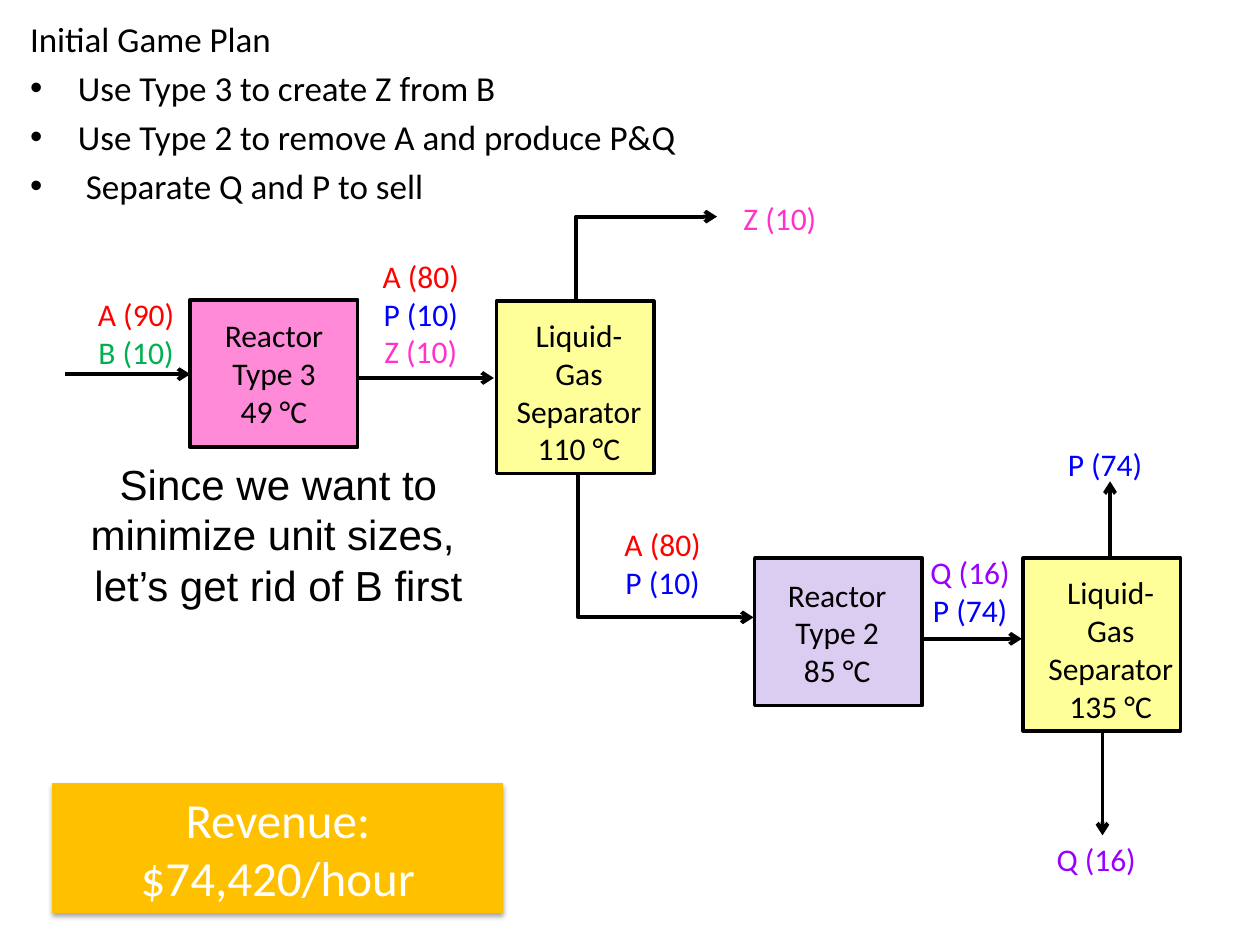
from dataclasses import dataclass

from lxml.etree import SubElement
from pptx import Presentation
from pptx.dml.color import RGBColor
from pptx.enum.shapes import MSO_CONNECTOR as Conn, MSO_SHAPE as Shp
from pptx.enum.text import MSO_ANCHOR as Anchor, MSO_AUTO_SIZE as Fit, PP_ALIGN as Al
from pptx.oxml.ns import qn
from pptx.util import Inches, Pt

W, H = Inches(10), Inches(7.5)
BLACK = "000000"
SPECIES = {"A": "FF0000", "B": "00B050", "P": "0000FF", "Q": "9900FF", "Z": "FF33CC"}
FIRST_LINE, NEXT_LINE = 5.33, 4.05


@dataclass
class Box:
    x: float
    y: float
    w: float
    h: float

    def emu(self) -> tuple[int, int, int, int]:
        return px(self.x), py(self.y), px(self.w), py(self.h)


@dataclass
class Unit:
    box: Box
    label: Box
    lines: list[str]
    fill: str


@dataclass
class Stream:
    x: float
    y: float
    w: float
    lines: list[str]


@dataclass
class Arrow:
    x1: float
    y1: float
    x2: float
    y2: float


UNITS = [
    Unit(Box(15.1, 31.73, 13.3, 15.6), Box(15.1, 32.8, 13.3, 13.47),
         ["Reactor", "Type 3", "49 °C"], "FF8AD8"),
    Unit(Box(39.4, 31.87, 12.5, 18.27), Box(39.7, 32.8, 12.5, 17.47),
         ["Liquid-Gas Separator", "110 °C"], "FFFF99"),
    Unit(Box(59.9, 59.07, 13.3, 15.6), Box(59.8, 60.27, 13.3, 13.47),
         ["Reactor", "Type 2", "85 °C"], "DBCCF2"),
    Unit(Box(81.2, 59.07, 12.5, 18.27), Box(81.9, 60, 12.5, 17.47),
         ["Liquid-Gas Separator", "135 °C"], "FFFF99"),
]
STREAMS = [
    Stream(5.9, 30.53, 9.8, ["A (90)", "B (10)"]),
    Stream(23.4, 26.53, 20, ["A (80)", "P (10)", "Z (10)"]),
    Stream(51.9, 20.4, 20, ["Z (10)"]),
    Stream(42.6, 54.93, 20, ["A (80)", "P (10)"]),
    Stream(67, 57.87, 20, ["Q (16)", "P (74)"]),
    Stream(77.7, 46.4, 20, ["P (74)"]),
    Stream(79.6, 88.27, 14.8, ["Q (16)"]),
]
STRAIGHT = [
    Arrow(5.2, 39.6, 15.1, 39.6),
    Arrow(28.4, 40, 39.2, 40),
    Arrow(73.2, 67.6, 81.1, 67.6),
    Arrow(88.1, 59.07, 88.1, 50.93),
    Arrow(87.5, 77.47, 87.5, 88.4),
]
BENT = [Arrow(45.7, 31.87, 56.9, 22.93), Arrow(45.9, 50.27, 59.8, 65.33)]
PLAN = ["Initial Game Plan", "Use Type 3 to create Z from B",
        "Use Type 2 to remove A and produce P&Q", " Separate Q and P to sell"]


def px(share: float) -> int:
    return round(W * share / 100)


def py(share: float) -> int:
    return round(H * share / 100)


def rgb(color: str) -> RGBColor:
    return RGBColor.from_string(color)


def write(tf, lines: list[str], size: float, colors: list[str],
          font: str = "Calibri", align=Al.CENTER) -> None:
    tf.word_wrap = True
    tf.text = "\n".join(lines)
    for p, color in zip(tf.paragraphs, colors):
        p.alignment = align
        f = p.runs[0].font
        f.name, f.size, f.color.rgb = font, Pt(size), rgb(color)


def add_text(s, box: Box, lines: list[str], size: float, colors: list[str],
             font: str = "Calibri", align=Al.CENTER, fit=Fit.SHAPE_TO_FIT_TEXT):
    tf = s.shapes.add_textbox(*box.emu()).text_frame
    write(tf, lines, size, colors, font, align)
    tf.auto_size = fit
    return tf


def add_rect(s, box: Box, fill: str, line: str, width: float):
    sp = s.shapes.add_shape(Shp.RECTANGLE, *box.emu())
    sp.shadow.inherit = False
    sp.fill.solid()
    sp.fill.fore_color.rgb = rgb(fill)
    sp.line.color.rgb = rgb(line)
    sp.line.width = Pt(width)
    return sp


def add_unit(s, unit: Unit) -> None:
    add_rect(s, unit.box, unit.fill, BLACK, 2)
    add_text(s, unit.label, unit.lines, 18, [BLACK] * len(unit.lines))


def add_stream(s, st: Stream) -> None:
    height = FIRST_LINE + NEXT_LINE * (len(st.lines) - 1)
    colors = [SPECIES[line[0]] for line in st.lines]
    add_text(s, Box(st.x, st.y, st.w, height), st.lines, 18, colors)


def style_arrow(c) -> None:
    c.line.color.rgb = rgb(BLACK)
    c.line.width = Pt(2.25)
    SubElement(c.line._get_or_add_ln(), qn("a:tailEnd"), type="arrow")
    SubElement(c.element.spPr, qn("a:effectLst"))


def add_arrow(s, a: Arrow) -> None:
    style_arrow(s.shapes.add_connector(
        Conn.STRAIGHT, px(a.x1), py(a.y1), px(a.x2), py(a.y2)))


def add_bent_arrow(s, a: Arrow) -> None:
    x1, y1, x2, y2 = px(a.x1), py(a.y1), px(a.x2), py(a.y2)
    w, h = abs(y2 - y1), abs(x2 - x1)
    left, top = (x1 + x2 - w) // 2, (y1 + y2 - h) // 2
    c = s.shapes.add_connector(Conn.ELBOW, left, top, left + w, top + h)
    c.element.spPr.find(qn("a:prstGeom")).set("prst", "bentConnector2")
    xfrm = c.element.spPr.find(qn("a:xfrm"))
    rising = y2 < y1
    xfrm.set("rot", str((90 if rising else 270) * 60000))
    xfrm.set("flipH", "1")
    if rising:
        xfrm.set("flipV", "1")
    style_arrow(c)


def add_revenue(s) -> None:
    sp = add_rect(s, Box(4.2, 82.93, 35.7, 13.6), "FFC000", "FFC000", 0.75)
    write(sp.text_frame, ["Revenue: $74,420/hour"], 28, ["FFFFFF"])
    sp.text_frame.vertical_anchor = Anchor.MIDDLE
    effects = sp.element.spPr.find(qn("a:effectLst"))
    shadow = SubElement(effects, qn("a:outerShdw"), blurRad=str(Pt(3.1)),
                        dist=str(Pt(1.8)), dir=str(90 * 60000), rotWithShape="0")
    color = SubElement(shadow, qn("a:srgbClr"), val=BLACK)
    SubElement(color, qn("a:alpha"), val="35000")


def add_plan(s) -> None:
    tf = add_text(s, Box(1.4, 1.2, 65.7, 40.53), PLAN, 20, [BLACK] * len(PLAN),
                  align=Al.LEFT, fit=Fit.NONE)
    for i, p in enumerate(tf.paragraphs):
        pPr = p._p.get_or_add_pPr()
        before = SubElement(pPr, qn("a:spcBef"))
        SubElement(before, qn("a:spcPct"), val="20000")
        if i:
            pPr.set("marL", str(Inches(0.38)))
            pPr.set("indent", str(-Inches(0.38)))
            SubElement(pPr, qn("a:buFont"), typeface="Arial")
            SubElement(pPr, qn("a:buChar"), char="•")


def main() -> None:
    prs = Presentation()
    prs.slide_width, prs.slide_height = W, H
    s = prs.slides.add_slide(prs.slide_layouts[6])
    for draw, items in ((add_unit, UNITS), (add_arrow, STRAIGHT),
                        (add_bent_arrow, BENT), (add_stream, STREAMS)):
        for item in items:
            draw(s, item)
    add_revenue(s)
    add_text(s, Box(3, 47.87, 38.2, 17.47),
             ["Since we want to minimize unit sizes, ", "let’s get rid of B first"],
             24, [BLACK] * 2, "Arial")
    add_plan(s)
    prs.save("out.pptx")


if __name__ == "__main__":
    main()
